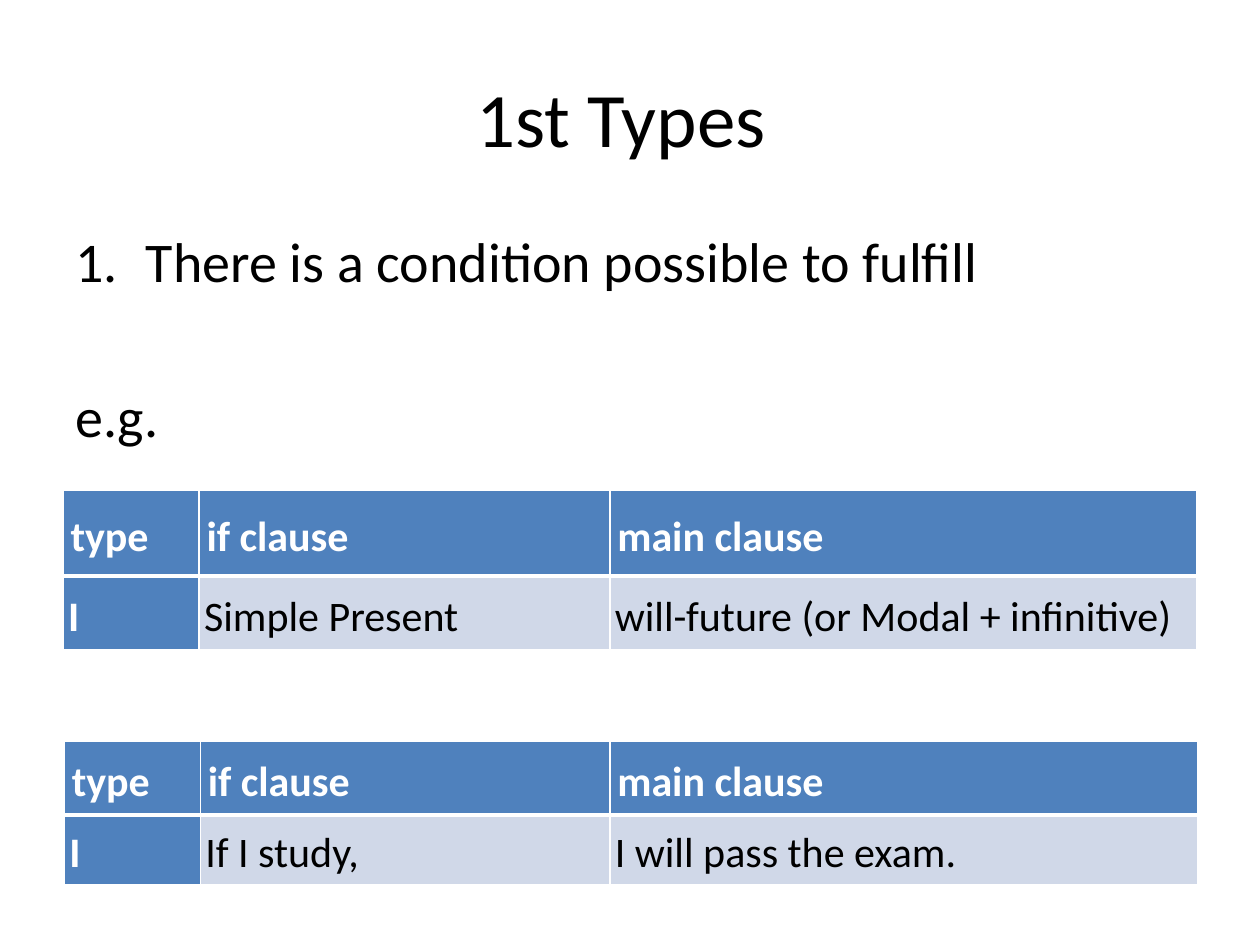
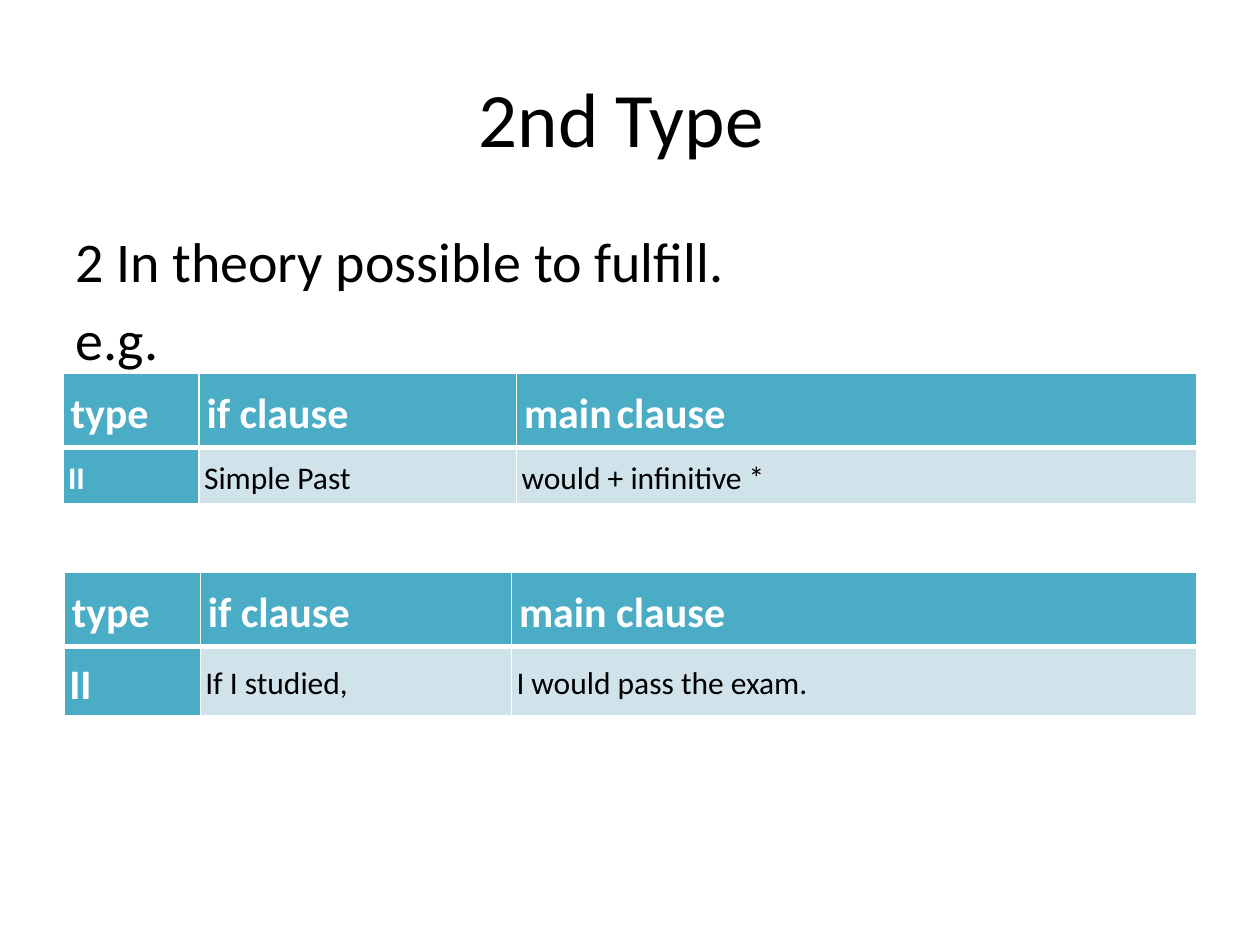
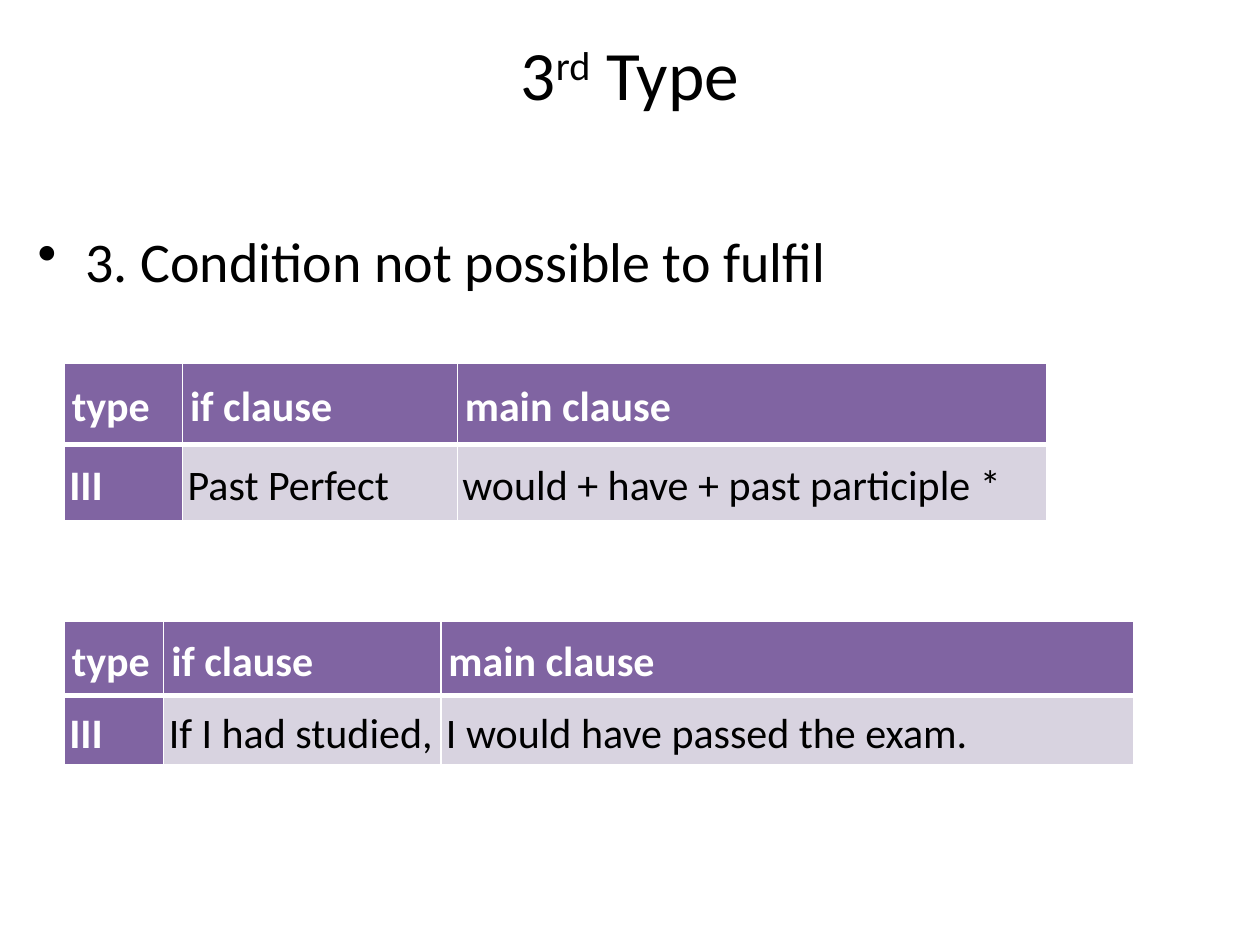
import pptx
import pptx.dml.color
import pptx.enum.text
import pptx.oxml
import pptx.oxml.ns
import pptx.util

COLUMNS, ROWS = 100, 75
FONT = "Calibri"
BLACK, WHITE = "000000", "FFFFFF"
HEADINGS = ("type", "if clause", "main clause")
TITLE_BOX = (5, 3, 90, 12.5)
BODY_BOX = (5, 17.5, 90, 49.5)
ANCHOR = pptx.enum.text.MSO_ANCHOR

prs = pptx.Presentation()
prs.slide_width, prs.slide_height = pptx.util.Inches(10), pptx.util.Inches(7.5)


def rgb(value):
    return pptx.dml.color.RGBColor.from_string(value)


def across(columns):
    return int(prs.slide_width * columns / COLUMNS)


def down(rows):
    return int(prs.slide_height * rows / ROWS)


def place(box):
    left, top, width, height = box
    return across(left), down(top), across(width), down(height)


def set_all(target, values):
    for name, value in values.items():
        setattr(target, name, value)


def margins(size):
    return {f"margin_{side}": pptx.util.Inches(size)
            for side in ("left", "right", "top", "bottom")}


def add_run(p, text, size, color=BLACK, bold=False, raised=False):
    r = p.add_run()
    r.text = text
    set_all(r.font, {"name": FONT, "size": pptx.util.Pt(size), "bold": bold})
    r.font.color.rgb = rgb(color)
    if raised:
        r.font._element.set("baseline", "30000")


def add_title(slide, parts, box=TITLE_BOX, size=44, frame=None):
    """Fill the title with (text, raised) parts."""
    sp = slide.shapes.title
    set_all(sp, dict(zip(("left", "top", "width", "height"), place(box))))
    tf = sp.text_frame
    set_all(tf, {"vertical_anchor": ANCHOR.MIDDLE, "word_wrap": True, **(frame or {})})
    p = tf.paragraphs[0]
    p.alignment = pptx.enum.text.PP_ALIGN.CENTER
    for text, raised in parts:
        add_run(p, text, size, raised=raised)


def add_bullet(p, indent, tag, **attributes):
    pPr = p._p.get_or_add_pPr()
    width = pptx.util.Inches(indent)
    pPr.set("marL", str(width))
    pPr.set("indent", str(-width))
    bullet = pptx.oxml.ns.qn(tag)
    pPr.append(pPr.makeelement(bullet, attributes))


def add_body(slide, lines, box=BODY_BOX):
    """Write lines of (text, space before in points, bullet or None)."""
    tf = slide.shapes.add_textbox(*place(box)).text_frame
    tf.word_wrap = True
    for i, (text, space, bullet) in enumerate(lines):
        p = tf.add_paragraph() if i else tf.paragraphs[0]
        p.space_before = pptx.util.Pt(space)
        if bullet:
            add_bullet(p, **bullet)
        add_run(p, text, 32)


def add_borders(cell, bottom):
    tcPr = cell._tc.get_or_add_tcPr()
    for side, width in (("L", 1), ("R", 1), ("T", 1), ("B", bottom)):
        tcPr.append(pptx.oxml.parse_xml(
            f'<a:ln{side} {pptx.oxml.ns.nsdecls("a")} w="{pptx.util.Pt(width)}">'
            f'<a:solidFill><a:srgbClr val="{WHITE}"/></a:solidFill></a:ln{side}>'))


def fill_cell(cell, parts, fill, color, bold, margin, bottom):
    set_all(cell, {"vertical_anchor": ANCHOR.MIDDLE, **margins(margin)})
    add_borders(cell, bottom)
    cell.fill.solid()
    cell.fill.fore_color.rgb = rgb(fill)
    p = cell.text_frame.paragraphs[0]
    p.line_spacing = 1.15
    for text, size in parts:
        add_run(p, text, size, color, bold)


def add_clauses(slide, origin, widths, heights, colors, texts,
                sizes=(24, 24, 24), headings=HEADINGS):
    """Draw one heading row over one row of clauses."""
    strong, pale = colors
    box = (*origin, sum(widths), sum(heights))
    table = slide.shapes.add_table(2, len(widths), *place(box)).table
    for row, height in zip(table.rows, heights):
        row.height = down(height)
    for i, width in enumerate(widths):
        table.columns[i].width = across(width)
        heading = headings[i]
        parts = [(heading, 24)] if isinstance(heading, str) else heading
        fill_cell(table.cell(0, i), parts, strong, WHITE, True, 0.06, 3)
        fill, color = (pale, BLACK) if i else (strong, WHITE)
        fill_cell(table.cell(1, i), [(texts[i], sizes[i])], fill, color, i == 0, 0.04, 1)


def new_slide():
    return prs.slides.add_slide(prs.slide_layouts[5])


def first_type():
    slide = new_slide()
    colors = ("4F81BD", "D0D8E8")
    number = {"indent": 0.56, "tag": "a:buAutoNum", "type": "arabicPeriod"}
    add_title(slide, [("1st Types ", False)])
    add_body(slide, [("There is a condition possible to fulfill", 6, number),
                     ("e.g.", 50, None)])
    add_clauses(slide, (5, 38.9), (10.8, 32.6, 46.6), (6.8, 5.9), colors,
                ("I", "Simple Present", "will-future (or Modal + infinitive)"))
    add_clauses(slide, (5.1, 58.8), (10.8, 32.5, 46.7), (5.9, 5.5), colors,
                ("I", "If I study,", "I will pass the exam."))


def second_type():
    slide = new_slide()
    colors = ("4BACC6", "D0E3EA")
    add_title(slide, [("2nd Type ", False)])
    add_body(slide, [("2 In theory possible to fulfill.", 6, None), ("e.g.", 6, None)])
    narrow_gap = [("main", 24), (" ", 12), ("clause", 24)]
    add_clauses(slide, (5, 29.6), (10.8, 25.2, 54), (5.9, 4.5), colors,
                ("II", "Simple Past", "would + infinitive *"),
                sizes=(18, 18, 18), headings=(*HEADINGS[:2], narrow_gap))
    add_clauses(slide, (5.1, 45.4), (10.8, 24.7, 54.4), (5.9, 5.5), colors,
                ("II", "If I studied,", "I would pass the exam."), sizes=(24, 18, 18))


def third_type():
    slide = new_slide()
    colors = ("8064A2", "D8D3E0")
    dot = {"indent": 0.38, "tag": "a:buChar", "char": "•"}
    add_title(slide, [("3", False), ("rd", True), (" Type", False)],
              box=(5, 2.5, 90, 12.5), size=39.6,
              frame={"vertical_anchor": ANCHOR.TOP, "margin_top": 0})
    add_body(slide, [("3. Condition not possible to fulfil", 6, dot)],
             box=(2, 17.5, 93, 49.5))
    add_clauses(slide, (5.1, 28.8), (9.4, 21.8, 46.8), (6.5, 6), colors,
                ("III", "Past Perfect", "would + have + past participle *"))
    add_clauses(slide, (5.1, 49.3), (7.9, 22, 55), (5.9, 5.5), colors,
                ("III", "If I had studied,", "I would have passed the exam."))


def main():
    for build in (first_type, second_type, third_type):
        build()
    prs.save("out.pptx")


if __name__ == "__main__":
    main()
